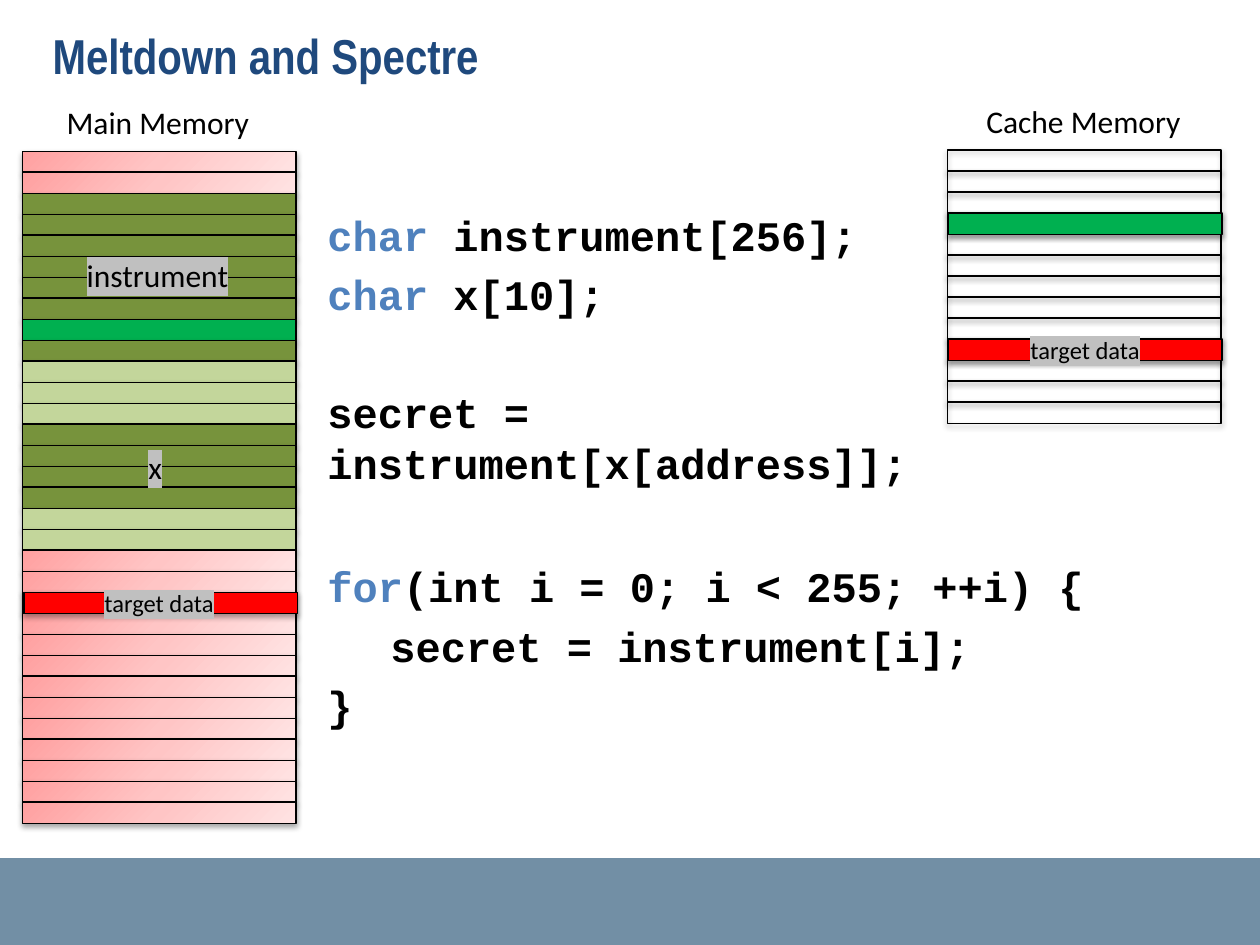
"""Build the Meltdown and Spectre slide: main memory, cache memory and attack code."""
import copy
from dataclasses import dataclass

import lxml.etree
import pptx
import pptx.dml.color
import pptx.enum.shapes
import pptx.enum.text
import pptx.oxml.ns
import pptx.util

Inches, Pt, qn = pptx.util.Inches, pptx.util.Pt, pptx.oxml.ns.qn
RGB = pptx.dml.color.RGBColor.from_string


@dataclass(frozen=True)
class Theme:
    title: str = "1F497D"
    text: str = "000000"
    keyword: str = "4F81BD"
    footer: str = "728FA5"
    highlight: str = "C0C0C0"
    array: str = "77933C"
    user: str = "C3D69B"
    probed: str = "00B050"
    secret: str = "FF0000"
    kernel: tuple[str, ...] = ("FFA0A0", "FFC5C5", "FFE3E3")
    title_font: str = "Arial Narrow"
    label_font: str = "Calibri"
    code_font: str = "Courier New"
    title_size: float = 28
    code_size: float = 24
    label_size: float = 18
    small_size: float = 14
    leading: float = 29
    para_gap: float = 4.8


@dataclass(frozen=True)
class Bank:
    left: float
    top: float
    rows: tuple


@dataclass(frozen=True)
class Overlay:
    bank: Bank
    row: int
    fill: str


@dataclass(frozen=True)
class Label:
    text: str
    left: float
    top: float
    width: float
    size: float
    highlight: bool = False


@dataclass(frozen=True)
class CodeLine:
    keyword: str
    rest: str
    blank_before: int = 0


@dataclass(frozen=True)
class CodeBlock:
    top: float
    width: float
    lines: tuple[CodeLine, ...]


T = Theme()
SLIDE_W, SLIDE_H = 10, 7.5
FOOTER_TOP = 0.908
ROW_PITCH = 1 / 6
ROW_W, ROW_H = 2.17, 0.17
OVERLAY_SHIFT = 0.01
CODE_LEFT = 2.5

MAIN = Bank(0.18, 1.2, (T.kernel,) * 2 + (T.array,) * 6 + (T.probed, T.array)
            + (T.user,) * 3 + (T.array,) * 4 + (T.user,) * 2 + (T.kernel,) * 13)
CACHE = Bank(7.52, 1.19, (None,) * 13)
OVERLAYS = (Overlay(MAIN, 21, T.secret), Overlay(CACHE, 3, T.probed),
            Overlay(CACHE, 9, T.secret))
LABELS = (
    Label("Main Memory", 0.43, 0.77, 1.67, T.label_size),
    Label("Cache Memory", 7.73, 0.76, 1.76, T.label_size),
    Label("instrument", 0.59, 1.98, 1.34, T.label_size, True),
    Label("x", 1.08, 3.51, 0.37, T.label_size, True),
    Label("target data", 0.73, 4.62, 1.08, T.small_size, True),
    Label("target data", 8.08, 2.61, 1.08, T.small_size, True),
)
CODE = (
    CodeBlock(1.61, 4.89, (
        CodeLine("char", " instrument[256];"),
        CodeLine("char", " x[10];"),
        CodeLine("", "secret = instrument[x[address]];", 1),
    )),
    CodeBlock(4.4, 7.19, (
        CodeLine("for", "(int i = 0; i < 255; ++i) {"),
        CodeLine("", "\tsecret = instrument[i];"),
        CodeLine("", "}"),
    )),
)


def add_rect(slide, left: float, top: float, width: float, height: float):
    """Add a rectangle without theme shadow."""
    sp = slide.shapes.add_shape(pptx.enum.shapes.MSO_SHAPE.RECTANGLE,
                                *map(Inches, (left, top, width, height)))
    sp.shadow.inherit = False
    return sp


def paint(sp, fill) -> None:
    """Fill a shape with nothing, one colour or an even diagonal gradient."""
    if fill is None:
        sp.fill.background()
    elif isinstance(fill, str):
        sp.fill.solid()
        sp.fill.fore_color.rgb = RGB(fill)
    else:
        sp.fill.gradient()
        sp.fill.gradient_angle = 315
        stops = sp._element.spPr.find(".//" + qn("a:gsLst"))
        stops.append(copy.deepcopy(stops[0]))
        for i, (stop, color) in enumerate(zip(sp.fill.gradient_stops, fill)):
            stop.position = i / (len(fill) - 1)
            stop.color.rgb = RGB(color)


def add_shadow(sp) -> None:
    """Give a shape a soft shadow straight below it."""
    effects = sp._element.spPr.find(qn("a:effectLst"))
    shadow = lxml.etree.SubElement(effects, qn("a:outerShdw"), blurRad="40000",
                                   dist="23000", dir="5400000", rotWithShape="0")
    color = lxml.etree.SubElement(shadow, qn("a:srgbClr"), val=T.text)
    lxml.etree.SubElement(color, qn("a:alpha"), val="35000")


def add_row(slide, bank: Bank, row: int, fill, shift: float = 0) -> None:
    """Draw one memory row of a bank."""
    sp = add_rect(slide, bank.left + shift, bank.top + row * ROW_PITCH, ROW_W, ROW_H)
    paint(sp, fill)
    sp.line.color.rgb = RGB(T.text)
    sp.line.width = Pt(0.75)
    add_shadow(sp)


def add_box(slide, left: float, top: float, width: float, height: float, wrap: bool):
    """Add a text box and return its text frame."""
    tf = slide.shapes.add_textbox(*map(Inches, (left, top, width, height))).text_frame
    tf.word_wrap = wrap
    return tf


def style(r, font: str, size: float, color: str, bold: bool = False) -> None:
    """Set the look of a run."""
    r.font.name, r.font.size, r.font.bold = font, Pt(size), bold
    r.font.color.rgb = RGB(color)


def add_label(slide, label: Label) -> None:
    """Write a short label, highlighted where it lies on rows."""
    tf = add_box(slide, label.left, label.top, label.width, label.size / 45, False)
    tf.text = label.text
    r = tf.paragraphs[0].runs[0]
    style(r, T.label_font, label.size, T.text)
    if label.highlight:
        mark = lxml.etree.Element(qn("a:highlight"))
        lxml.etree.SubElement(mark, qn("a:srgbClr"), val=T.highlight)
        r._r.rPr.find(qn("a:solidFill")).addnext(mark)


def add_code(slide, block: CodeBlock) -> None:
    """Write a block of code with coloured keywords."""
    tf = add_box(slide, CODE_LEFT, block.top, block.width, 2, True)
    for i, line in enumerate(block.lines):
        p = tf.add_paragraph() if i else tf.paragraphs[0]
        p.line_spacing = Pt(T.leading)
        p.space_before = Pt(T.para_gap + line.blank_before * (T.leading + T.para_gap) if i else 0)
        tabs = lxml.etree.SubElement(p._p.get_or_add_pPr(), qn("a:tabLst"))
        lxml.etree.SubElement(tabs, qn("a:tab"), pos=str(Inches(0.5)), algn="l")
        for text, color in ((line.keyword, T.keyword), (line.rest, T.text)):
            if text:
                r = p.add_run()
                r.text = text
                style(r, T.code_font, T.code_size, color, True)


def main() -> None:
    """Assemble and save the slide."""
    prs = pptx.Presentation()
    prs.slide_width, prs.slide_height = Inches(SLIDE_W), Inches(SLIDE_H)
    s = prs.slides.add_slide(prs.slide_layouts[6])
    footer = add_rect(s, 0, FOOTER_TOP * SLIDE_H, SLIDE_W, (1 - FOOTER_TOP) * SLIDE_H)
    paint(footer, T.footer)
    footer.line.fill.background()
    tf = add_box(s, 0.32, 0.15, 9.38, 0.92, True)
    tf.text = "Meltdown and Spectre"
    style(tf.paragraphs[0].runs[0], T.title_font, T.title_size, T.title, True)
    for bank in (MAIN, CACHE):
        for row, fill in enumerate(bank.rows):
            add_row(s, bank, row, fill)
    for overlay in OVERLAYS:
        add_row(s, overlay.bank, overlay.row, overlay.fill, OVERLAY_SHIFT)
    for label in LABELS:
        add_label(s, label)
    for block in CODE:
        add_code(s, block)
    prs.save("out.pptx")


if __name__ == "__main__":
    main()
